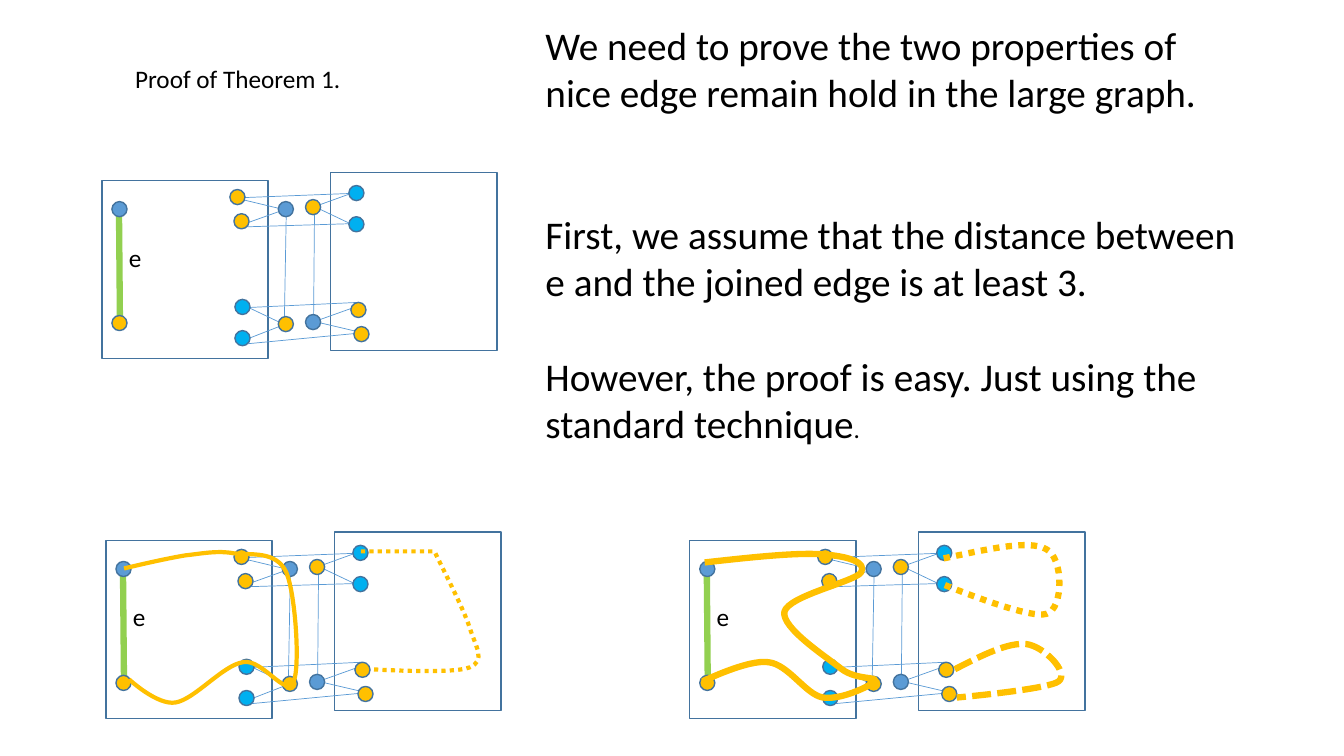
from lxml import etree
from pptx import Presentation
from pptx.dml.color import RGBColor
from pptx.enum.dml import MSO_LINE
from pptx.enum.shapes import MSO_CONNECTOR, MSO_SHAPE
from pptx.enum.text import MSO_ANCHOR, MSO_AUTO_SIZE, PP_ALIGN
from pptx.oxml.ns import qn
from pptx.util import Pt

PX = 9144  # 100 px to the inch
NODE_SIZE = 15
BLUE, CYAN, ORANGE, GREEN, OUTLINE = "5B9BD5", "00B0F0", "FFC000", "92D050", "43739E"
RECTANGLE, OVAL, STRAIGHT = MSO_SHAPE.RECTANGLE, MSO_SHAPE.OVAL, MSO_CONNECTOR.STRAIGHT
DOTS, DASHES = MSO_LINE.ROUND_DOT, MSO_LINE.SQUARE_DOT
color = RGBColor.from_string


def write_text(para, text, size=18, before=0, fill="000000"):
    para.alignment = PP_ALIGN.LEFT
    para.space_before = Pt(before)
    span = para.add_run()
    span.text = text
    span.font.size = Pt(size)
    span.font.name = "Calibri"
    span.font.color.rgb = color(fill)


def style_line(shape, line_color, width, dash=None):
    """Format the line of a shape or connector and switch its shadow off."""
    shape.line.color.rgb = color(line_color)
    shape.line.width = Pt(width)
    if dash:
        shape.line.dash_style = dash
    etree.SubElement(shape.element.spPr, qn("a:effectLst"))


deck = Presentation()
deck.slide_width, deck.slide_height = 1333 * PX, 750 * PX
page = deck.slides.add_slide(deck.slide_layouts[1])

# Title and explanation
title, body = page.placeholders
for box, area in ((title, (124, 58, 351, 40)), (body, (531, 16, 707, 434))):
    box.left, box.top, box.width, box.height = (length * PX for length in area)
    box.text_frame.word_wrap = True
    box.text_frame.auto_size = MSO_AUTO_SIZE.NONE
    box.text_frame.vertical_anchor = MSO_ANCHOR.TOP
write_text(title.text_frame.paragraphs[0], "Proof of Theorem 1.")

explanation = [
    ("We need to prove the two properties of nice edge remain hold in the large graph.", 0),
    ("First, we assume that the distance between e and the joined edge is at least 3.", 68),
    ("However, the proof is easy. Just using the standard technique", 34),
]
for index, (text, before) in enumerate(explanation):
    para = body.text_frame.add_paragraph() if index else body.text_frame.paragraphs[0]
    write_text(para, text, size=28, before=before)
    properties = para._p.get_or_add_pPr()
    properties.set("marL", "0")
    properties.set("indent", "0")
    etree.SubElement(properties, qn("a:buNone"))
write_text(para, ".", before=before)

# The same joined graph, drawn three times
frames = [(101, 179), (328, 171)]
thin_edges = [
    (284, 208, 282, 322), (282, 208, 236, 197), (282, 208, 240, 223),
    (282, 322, 240, 302), (282, 322, 246, 336),
    (311, 319, 312, 205), (312, 319, 359, 330), (312, 319, 354, 304),
    (312, 205, 354, 225), (312, 205, 348, 192),
    (243, 196, 346, 192), (245, 225, 346, 222),
    (248, 305, 355, 300), (246, 341, 351, 331),
]
edges = [(ends, BLUE, 0.5) for ends in thin_edges] + [((118, 207, 119, 321), GREEN, 4.5)]
nodes = {
    BLUE: [(276, 200), (303, 312), (111, 200)],
    CYAN: [(233, 328), (233, 297), (346, 184), (346, 215)],
    ORANGE: [(276, 314), (232, 212), (228, 188), (303, 198),
             (348, 300), (351, 324), (111, 313)],
}
for shift_x, shift_y in ((0, 0), (4, 357), (583, 357)):
    graph = page.shapes.add_group_shape().shapes
    for x, y in frames:
        frame = graph.add_shape(RECTANGLE, (x + shift_x) * PX, (y + shift_y) * PX,
                                165 * PX, 177 * PX)
        frame.fill.background()
        style_line(frame, OUTLINE, 1)
    for (x1, y1, x2, y2), edge_color, width in edges:
        edge = graph.add_connector(STRAIGHT, (x1 + shift_x) * PX, (y1 + shift_y) * PX,
                                   (x2 + shift_x) * PX, (y2 + shift_y) * PX)
        style_line(edge, edge_color, width)
    for node_color, places in nodes.items():
        for x, y in places:
            node = graph.add_shape(OVAL, (x + shift_x) * PX, (y + shift_y) * PX,
                                   NODE_SIZE * PX, NODE_SIZE * PX)
            node.fill.solid()
            node.fill.fore_color.rgb = color(node_color)
            style_line(node, OUTLINE, 1)
    label = graph.add_textbox((118 + shift_x) * PX, (235 + shift_y) * PX, 61 * PX, 40 * PX)
    label.text_frame.word_wrap = True
    write_text(label.text_frame.paragraphs[0], "e")

# Cycles: a start point, then three points for each Bezier segment
cycles = [
    (3, None, [(123, 564), (144, 559), (166, 554), (184, 551), (202, 549), (216, 546),
               (232, 549), (249, 551), (274, 546), (284, 568), (293, 589), (298, 662),
               (291, 677), (283, 692), (260, 653), (241, 657), (221, 660), (193, 694),
               (174, 697), (156, 700), (128, 674), (128, 674)]),
    (3, DOTS, [(358, 547), (358, 547), (431, 547), (431, 547), (437, 560), (460, 604),
               (466, 623), (472, 642), (482, 655), (466, 662), (450, 669), (369, 664),
               (369, 664)]),
    (4.5, None, [(699, 558), (744, 553), (790, 548), (816, 550), (842, 552), (860, 558),
                 (854, 568), (848, 577), (782, 591), (778, 607), (775, 623), (820, 652),
                 (835, 664), (850, 675), (871, 671), (868, 676), (864, 680), (834, 695),
                 (816, 692), (799, 689), (782, 659), (762, 657), (742, 654), (697, 676),
                 (697, 676)]),
    (4.5, DOTS, [(936, 554), (979, 545), (1021, 535), (1038, 545), (1055, 554),
                 (1055, 604), (1038, 609), (1021, 615), (936, 580), (936, 580)]),
    (4.5, DASHES, [(947, 664), (974, 650), (1000, 637), (1018, 639), (1035, 641),
                   (1061, 667), (1050, 676), (1039, 684), (949, 692), (949, 692)]),
]
for width, dash, points in cycles:
    builder = page.shapes.build_freeform(*points[0], scale=PX)
    builder.add_line_segments(points[1:], close=False)
    cycle = builder.convert_to_shape()
    cycle.fill.background()
    style_line(cycle, ORANGE, width, dash)
    outline = next(cycle.element.iter(qn("a:path")))
    segments = outline.findall(qn("a:lnTo"))
    for start in range(0, len(segments), 3):
        curve = etree.SubElement(outline, qn("a:cubicBezTo"))
        for segment in segments[start:start + 3]:
            curve.append(segment[0])
            outline.remove(segment)

deck.save("out.pptx")
